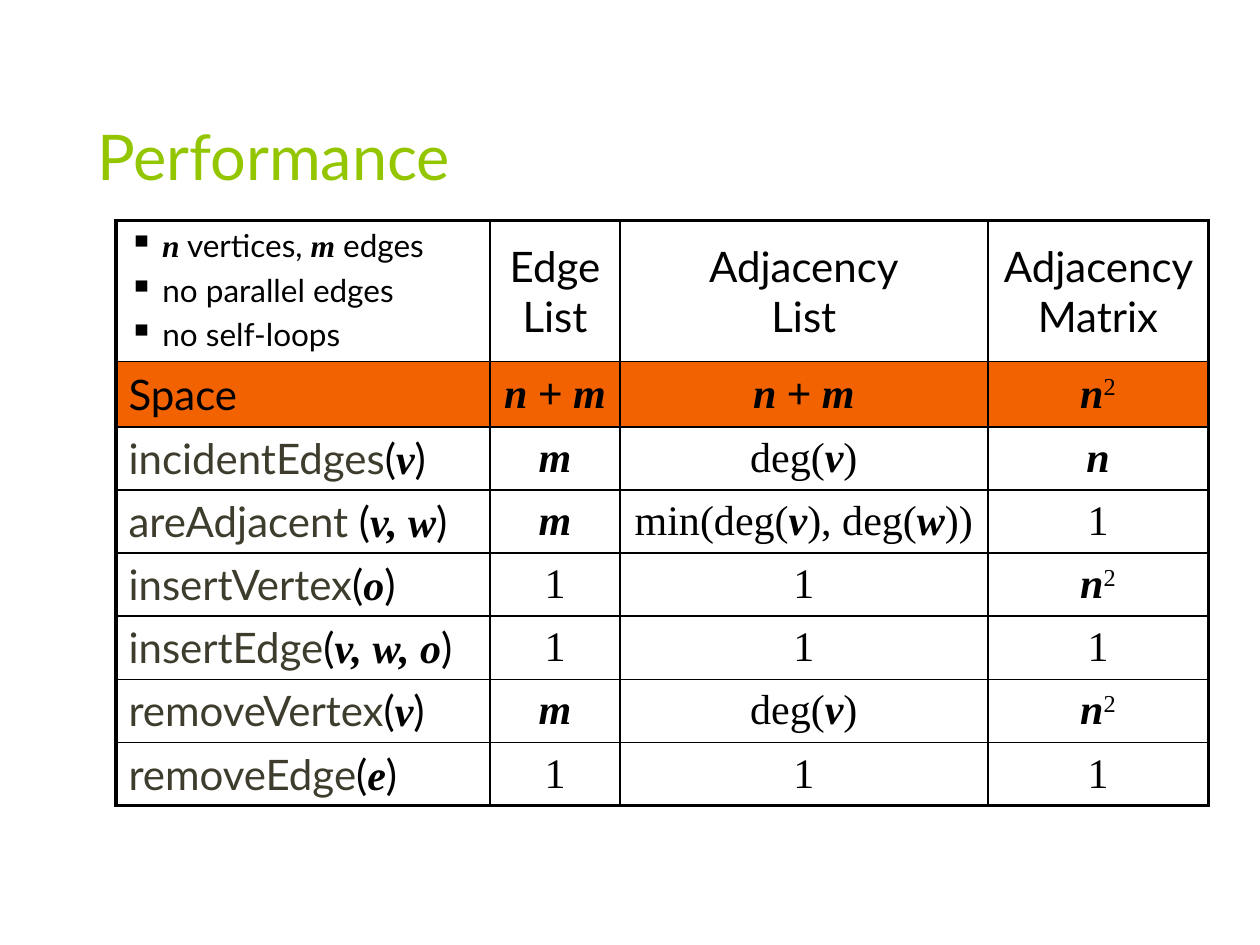
"""Build the slide that compares the performance of graph representations."""
import lxml.etree
import pptx
import pptx.dml.color
import pptx.enum.text
import pptx.oxml.ns
import pptx.util

Inches, Pt = pptx.util.Inches, pptx.util.Pt
PP, MSO = pptx.enum.text.PP_ALIGN, pptx.enum.text.MSO_ANCHOR
qn = pptx.oxml.ns.qn

THEME = {
    "title": "94C600", "name": "3E3D2D", "ink": "000000", "band": "F26200",
    "title_size": 36, "body_size": 24, "note_size": 18,
    "sans": "Lato", "serif": "Times New Roman", "plus": "Arial",
    "thin": 1, "thick": 2.25,
}
STYLES = {
    "title": {"name": THEME["sans"], "color": "title"},
    "name": {"name": THEME["sans"], "color": "name"},
    "sans": {"name": THEME["sans"]},
    "math": {"name": THEME["serif"], "bold": True, "italic": True},
    "serif": {"name": THEME["serif"]},
    "plus": {"name": THEME["plus"]},
    "super": {"name": THEME["serif"]},
}


def add_runs(p, runs, size):
    """Add (style, text) runs to a paragraph."""
    for style, text in runs:
        for i, line in enumerate(text.split("\n")):
            if i:
                p.add_line_break()
            r = p.add_run()
            r.text = line
            fmt = {"size": Pt(size), "bold": False, "italic": False, **STYLES[style]}
            color = THEME[fmt.pop("color", "ink")]
            for key, value in fmt.items():
                setattr(r.font, key, value)
            r.font.color.rgb = pptx.dml.color.RGBColor.from_string(color)
            if style == "super":
                r.font._element.set("baseline", "30000")


def add_xml(parent, tag, **attrs):
    """Append a DrawingML child element."""
    return lxml.etree.SubElement(parent, qn(tag), attrs)


ONE = [("serif", "1")]
N = [("math", "n")]
M = [("math", "m")]
N_SQUARED = N + [("super", "2")]
N_PLUS_M = [("math", "n "), ("plus", "+"), ("math", " m")]
DEG = [("serif", "deg("), ("math", "v"), ("serif", ")")]
MIN_DEG = [("serif", "min(deg("), ("math", "v"), ("serif", "), deg("),
           ("math", "w"), ("serif", "))")]
NOTES = [
    [("math", " n"), ("sans", " vertices, "), ("math", "m"), ("sans", " edges")],
    [("sans", " no parallel edges")],
    [("sans", " no self-loops")],
]
HEADERS = ["Edge\nList", "Adjacency\nList", "Adjacency Matrix"]
METHODS = [
    ("incidentEdges", "v", M, DEG, N),
    ("areAdjacent ", "v, w", M, MIN_DEG, ONE),
    ("insertVertex", "o", ONE, ONE, N_SQUARED),
    ("insertEdge", "v, w, o", ONE, ONE, ONE),
    ("removeVertex", "v", M, DEG, N_SQUARED),
    ("removeEdge", "e", ONE, ONE, ONE),
]
COLS = [2.97, 1.03, 2.92, 1.75]
ROWS = [1.12, 0.52] + [0.5] * len(METHODS)

grid = [
    [NOTES] + [[[("sans", h)]] for h in HEADERS],
    [[[("sans", "Space")]], [N_PLUS_M], [N_PLUS_M], [N_SQUARED]],
]
for name, args, *costs in METHODS:
    call = [("name", name), ("sans", "("), ("math", args), ("sans", ")")]
    grid.append([[call]] + [[cost] for cost in costs])

prs = pptx.Presentation()
prs.slide_width, prs.slide_height = Inches(10), Inches(7.5)
s = prs.slides.add_slide(prs.slide_layouts[5])

title = s.shapes.title
box = {"left": 0.67, "top": 0.33, "width": 8.5, "height": 1.25}
for key, value in box.items():
    setattr(title, key, Inches(value))
title.text_frame.vertical_anchor = MSO.BOTTOM
title.text_frame.paragraphs[0].alignment = PP.LEFT
add_runs(title.text_frame.paragraphs[0], [("title", "Performance")], THEME["title_size"])

table = s.shapes.add_table(len(ROWS), len(COLS), Inches(0.92), Inches(1.75),
                           Inches(sum(COLS)), Inches(sum(ROWS))).table
table.first_row = table.horz_banding = False
for col, width in zip(table.columns, COLS):
    col.width = Inches(width)
for row, height in zip(table.rows, ROWS):
    row.height = Inches(height)

for i, row in enumerate(grid):
    for j, paragraphs in enumerate(row):
        cell = table.cell(i, j)
        is_note = i == j == 0
        size = THEME["note_size" if is_note else "body_size"]
        cell.vertical_anchor = MSO.TOP if is_note else MSO.MIDDLE

        outer = {"L": j == 0, "R": j == len(COLS) - 1, "T": i == 0, "B": i == len(ROWS) - 1}
        for side, is_outer in outer.items():
            width = Pt(THEME["thick" if is_outer else "thin"])
            ln = add_xml(cell._tc.get_or_add_tcPr(), f"a:ln{side}", w=str(width))
            add_xml(add_xml(ln, "a:solidFill"), "a:srgbClr", val=THEME["ink"])
        if i == 1:
            cell.fill.solid()
            cell.fill.fore_color.rgb = pptx.dml.color.RGBColor.from_string(THEME["band"])
        else:
            cell.fill.background()

        tf = cell.text_frame
        for k, runs in enumerate(paragraphs):
            p = tf.add_paragraph() if k else tf.paragraphs[0]
            p.alignment = PP.CENTER if j else PP.LEFT
            p.space_before = Pt(0.2 * size)
            if is_note:
                pPr = p._p.get_or_add_pPr()
                add_xml(add_xml(pPr, "a:buClr"), "a:srgbClr", val=THEME["ink"])
                add_xml(pPr, "a:buSzPct", val="110000")
                add_xml(pPr, "a:buChar", char="▪")
            add_runs(p, runs, size)

prs.save("out.pptx")
